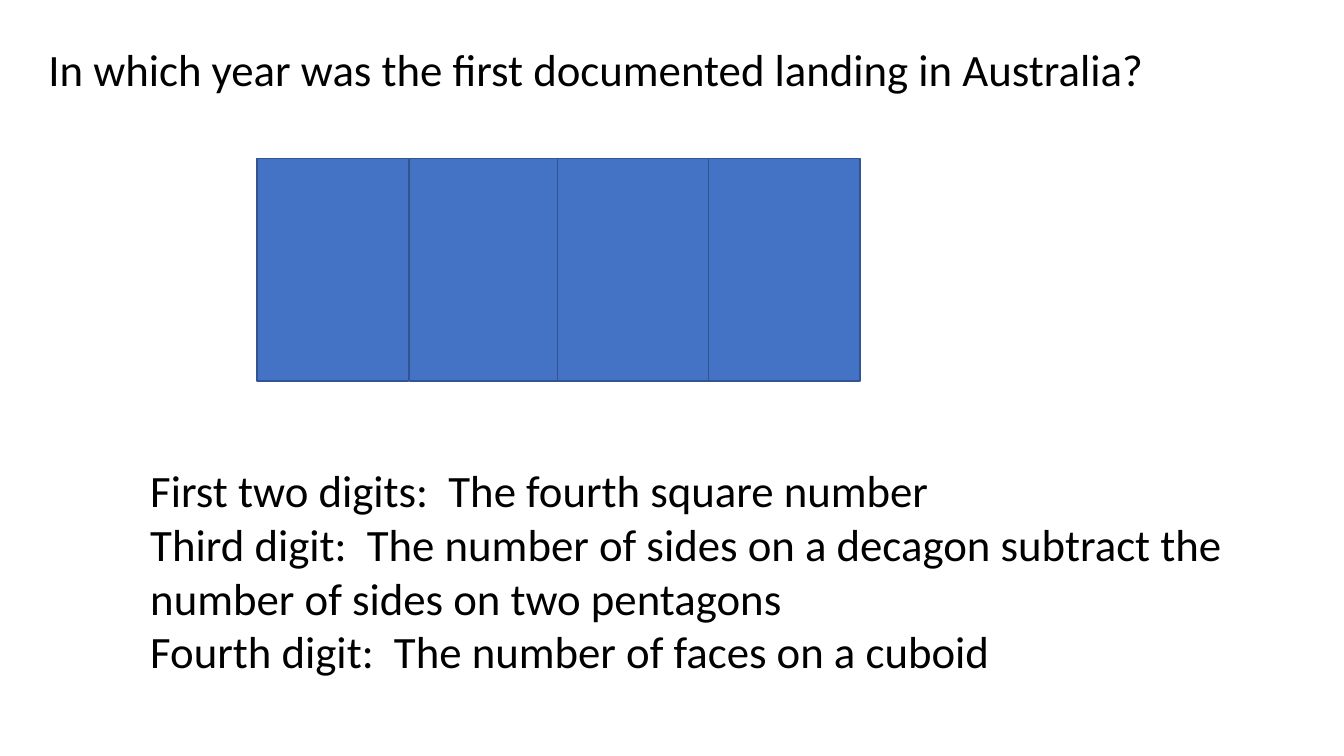
from pptx import Presentation
from pptx.dml.color import RGBColor
from pptx.enum.shapes import MSO_SHAPE
from pptx.enum.text import MSO_ANCHOR, MSO_AUTO_SIZE, PP_ALIGN
from pptx.util import Inches, Pt
from lxml.etree import SubElement
from pptx.oxml.ns import qn

QUESTION = "In which year was the first documented landing in Australia?"
CLUES = [
    "First two digits:  The fourth square number",
    "Third digit:  The number of sides on a decagon subtract the number of sides on two pentagons",
    "Fourth digit:  The number of faces on a cuboid",
]

FONT = "Calibri"
TEXT_SIZE = Pt(32)
BLACK = RGBColor(0x00, 0x00, 0x00)
COVER_FILL = RGBColor(0x44, 0x72, 0xC4)
COVER_LINE = RGBColor(0x32, 0x54, 0x91)

QUESTION_BOX = (0.38, 0.36, 11.9, 0.64)
CLUES_BOX = (1.39, 4.54, 11.04, 2.26)
COVER_LEFTS = (2.55, 4.06, 5.53, 7.03)  # one cover per digit
COVER_TOP, COVER_WIDTH, COVER_HEIGHT = 1.57, 1.5, 2.21


def inches(box):
    return [Inches(length) for length in box]


def write(holder, box, lines):
    """Place a text holder and fill it with plain, left-aligned paragraphs."""
    holder.left, holder.top, holder.width, holder.height = inches(box)
    frame = holder.text_frame
    frame.text = "\n".join(lines)
    frame.word_wrap = True
    frame.auto_size = MSO_AUTO_SIZE.NONE
    frame.vertical_anchor = MSO_ANCHOR.TOP
    for paragraph in frame.paragraphs:
        paragraph.alignment = PP_ALIGN.LEFT
        paragraph.line_spacing = 1.0
        paragraph.space_before = paragraph.space_after = Pt(0)
        properties = paragraph._p.get_or_add_pPr()
        properties.set("marL", "0")
        properties.set("indent", "0")
        SubElement(properties, qn("a:buNone"))
        for run in paragraph.runs:
            run.font.name = FONT
            run.font.size = TEXT_SIZE
            run.font.color.rgb = BLACK


def add_cover(slide, left):
    cover = slide.shapes.add_shape(
        MSO_SHAPE.RECTANGLE, *inches((left, COVER_TOP, COVER_WIDTH, COVER_HEIGHT)))
    cover.shadow.inherit = False
    cover.fill.solid()
    cover.fill.fore_color.rgb = COVER_FILL
    cover.line.color.rgb = COVER_LINE
    cover.line.width = Pt(1)


def main():
    deck = Presentation()
    deck.slide_width, deck.slide_height = inches((13.33, 7.5))
    slide = deck.slides.add_slide(deck.slide_layouts[1])

    write(slide.shapes.title, QUESTION_BOX, [QUESTION])
    write(slide.placeholders[1], CLUES_BOX, CLUES)
    for left in COVER_LEFTS:
        add_cover(slide, left)

    deck.save("out.pptx")


if __name__ == "__main__":
    main()
